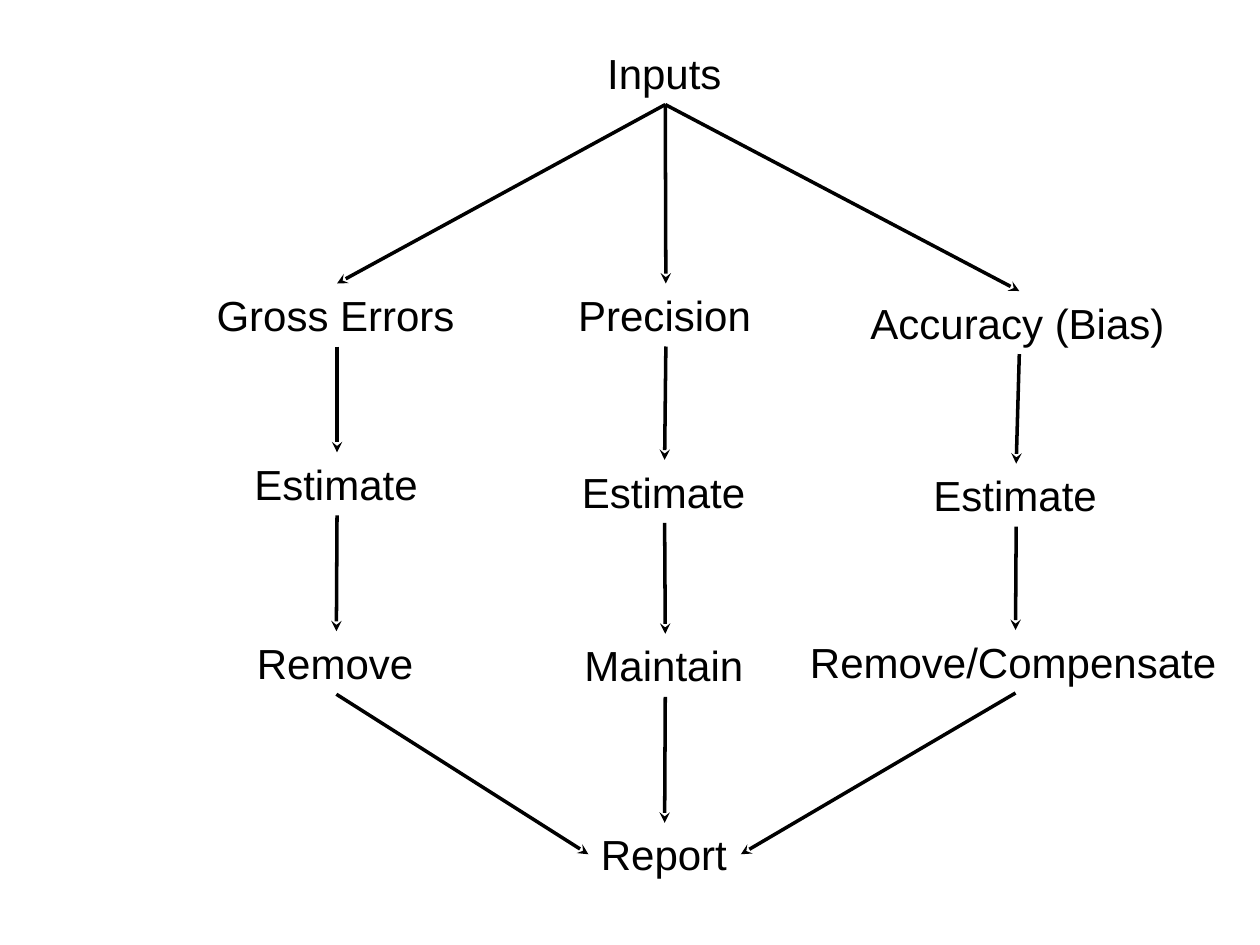
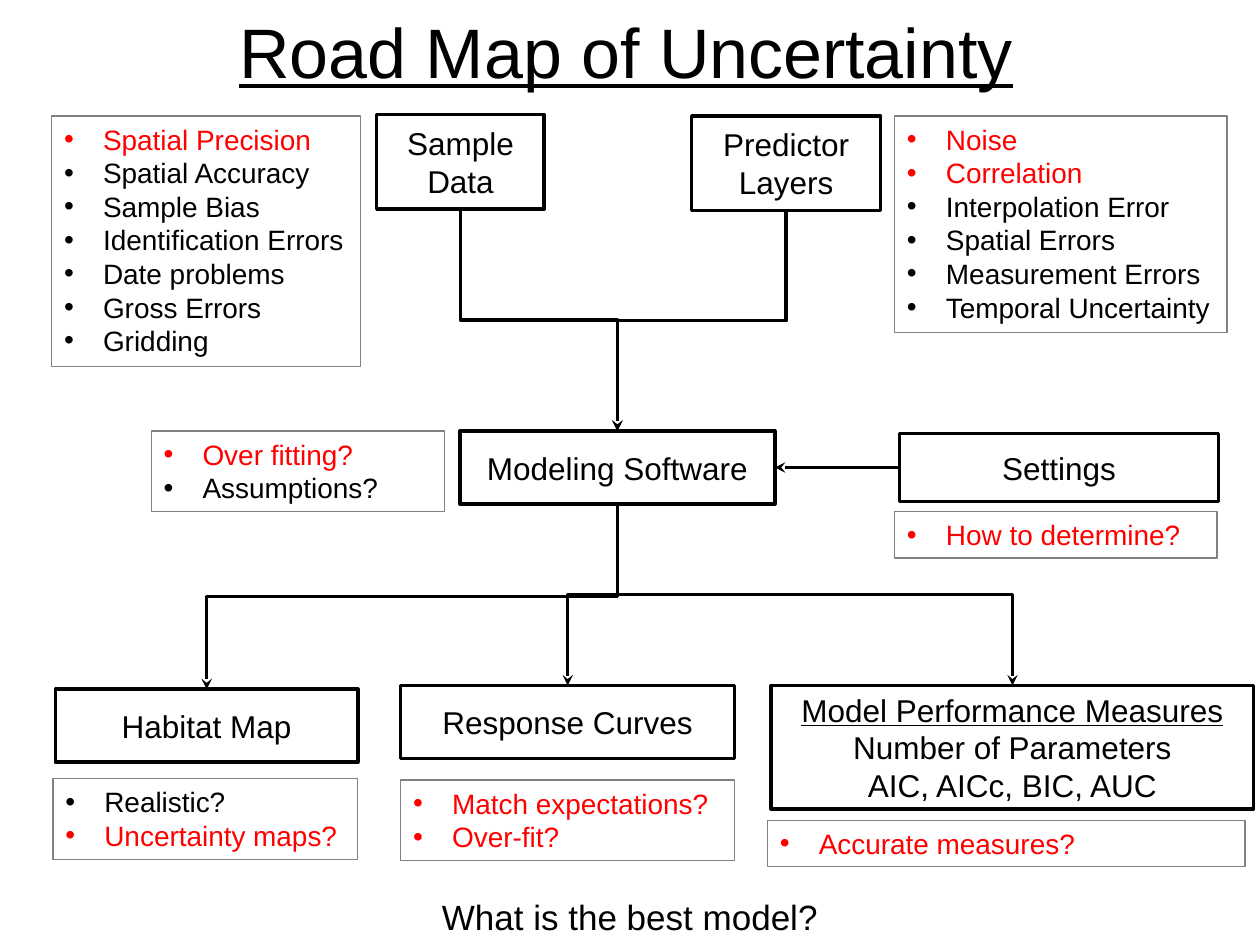
from itertools import pairwise
from typing import NamedTuple

from lxml import etree
from pptx import Presentation
from pptx import util as u
from pptx.dml import color
from pptx.enum import shapes, text
from pptx.oxml import ns

COLORS = {"ink": "000000", "paper": "FFFFFF", "frame": "808080", "alert": "FF0000"}
FONT = "Arial"
TOP, LEFT, BOTTOM, RIGHT = range(4)
LABEL_HEIGHT = 0.5
BULLET_INDENT = 0.31


class Label(NamedTuple):
    text: str
    left: float
    top: float
    width: float


class Box(NamedTuple):
    lines: list[str]
    left: float
    top: float
    width: float
    height: float
    heading: bool = False


class Line(NamedTuple):
    text: str
    color: str = "ink"
    underline: bool = False


class Notes(NamedTuple):
    lines: list[Line]
    left: float
    top: float
    width: float
    height: float
    wrap: bool = True
    border: float = 0.75


INPUTS = Label("Inputs", 4.72, 0.33, 1.12)
REPORT = Label("Report", 4.67, 6.53, 1.21)
BRANCHES = [
    ([Label("Gross Errors", 1.62, 2.25, 2.11),
      Label("Estimate", 1.92, 3.59, 1.51),
      Label("Remove", 1.94, 5.01, 1.46)], LEFT),
    ([Label("Precision", 4.49, 2.25, 1.59),
      Label("Estimate", 4.52, 3.65, 1.51),
      Label("Maintain", 4.54, 5.03, 1.48)], TOP),
    ([Label("Accuracy (Bias)", 6.81, 2.31, 2.56),
      Label("Estimate", 7.31, 3.68, 1.51),
      Label("Remove/Compensate", 6.33, 5, 3.46)], RIGHT),
]

SAMPLE = Box(["Sample Data"], 2.99, 0.91, 1.33, 0.75)
PREDICTORS = Box(["Predictor Layers"], 5.49, 0.92, 1.5, 0.75)
SOFTWARE = Box(["Modeling Software"], 3.65, 3.42, 2.5, 0.58)
SETTINGS = Box(["Settings"], 7.14, 3.44, 2.53, 0.54)
HABITAT = Box(["Habitat Map"], 0.44, 5.47, 2.4, 0.58)
CURVES = Box(["Response Curves"], 3.18, 5.44, 2.65, 0.58)
MEASURES = Box(
    ["Model Performance Measures", "Number of Parameters", "AIC, AICc, BIC, AUC"],
    6.12, 5.44, 3.83, 0.98, heading=True)
SOURCES = [SAMPLE, PREDICTORS]
RESULTS = [HABITAT, CURVES, MEASURES]

NOTES = [
    Notes([Line("Spatial Precision", "alert"), Line("Spatial Accuracy"),
           Line("Sample Bias"), Line("Identification Errors"),
           Line("Date problems"), Line("Gross Errors"), Line("Gridding")],
          0.41, 0.92, 2.45, 1.99, wrap=False),
    Notes([Line("Noise", "alert"), Line("Correlation", "alert"),
           Line("Interpolation Error"), Line("Spatial Errors"),
           Line("Measurement Errors"), Line("Temporal Uncertainty")],
          7.1, 0.92, 2.64, 1.72, wrap=False, border=1),
    Notes([Line("Over fitting?", "alert"), Line("Assumptions?")], 1.2, 3.42, 2.33, 0.64),
    Notes([Line("How to determine?", "alert")], 7.1, 4.06, 2.56, 0.37),
    Notes([Line("Realistic?"), Line("Uncertainty maps?", "alert")], 0.42, 6.18, 2.42, 0.64),
    Notes([Line("Match expectations?", "alert"), Line("Over-fit?", "alert")],
          3.18, 6.19, 2.65, 0.64),
    Notes([Line("Accurate measures?", "alert")], 6.09, 6.51, 3.79, 0.37),
]


def rgb(name: str) -> color.RGBColor:
    return color.RGBColor.from_string(COLORS[name])


def add_bullet(paragraph) -> None:
    properties = paragraph._p.get_or_add_pPr()
    indent = u.Inches(BULLET_INDENT)
    properties.set("marL", str(indent))
    properties.set("indent", str(-indent))
    font = etree.SubElement(properties, ns.qn("a:buFont"))
    font.set("typeface", FONT)
    etree.SubElement(properties, ns.qn("a:buChar")).set("char", "•")


def write(shape, lines: list[Line], *, size: float, align=text.PP_ALIGN.LEFT,
          anchor=text.MSO_ANCHOR.TOP, wrap: bool = True, grow: bool = False,
          bullets: bool = False) -> None:
    frame = shape.text_frame
    frame.word_wrap = wrap
    frame.vertical_anchor = anchor
    if grow:
        frame.auto_size = text.MSO_AUTO_SIZE.SHAPE_TO_FIT_TEXT
    for index, line in enumerate(lines):
        paragraph = frame.add_paragraph() if index else frame.paragraphs[0]
        paragraph.alignment = align
        if bullets:
            add_bullet(paragraph)
        run = paragraph.add_run()
        run.text = line.text
        run.font.name = FONT
        run.font.size = u.Pt(size)
        run.font.underline = line.underline
        run.font.color.rgb = rgb(line.color)


def add_text(slide, line: Line, left: float, top: float, width: float,
             height: float, **style):
    shape = slide.shapes.add_textbox(*map(u.Inches, (left, top, width, height)))
    write(shape, [line], grow=True, **style)
    return shape


def add_label(slide, label: Label):
    return add_text(slide, Line(label.text), label.left, label.top, label.width,
                    LABEL_HEIGHT, size=24, wrap=False)


def add_rectangle(slide, area: Box | Notes, border_color: str, border: float):
    shape = slide.shapes.add_shape(
        shapes.MSO_SHAPE.RECTANGLE,
        *map(u.Inches, (area.left, area.top, area.width, area.height)))
    shape.shadow.inherit = False
    shape.line.color.rgb = rgb(border_color)
    shape.line.width = u.Pt(border)
    return shape


def add_box(slide, box: Box):
    shape = add_rectangle(slide, box, "ink", 2)
    shape.fill.background()
    lines = [Line(content, underline=box.heading and index == 0)
             for index, content in enumerate(box.lines)]
    write(shape, lines, size=18, align=text.PP_ALIGN.CENTER,
          anchor=text.MSO_ANCHOR.MIDDLE)
    return shape


def add_notes(slide, notes: Notes) -> None:
    shape = add_rectangle(slide, notes, "frame", notes.border)
    shape.fill.solid()
    shape.fill.fore_color.rgb = rgb("paper")
    write(shape, notes.lines, size=16, wrap=notes.wrap, grow=True, bullets=True)


def style_arrow(connector) -> None:
    connector.line.color.rgb = rgb("ink")
    connector.line.width = u.Pt(2)
    tail = etree.SubElement(connector.line._get_or_add_ln(), ns.qn("a:tailEnd"))
    tail.set("type", "stealth")
    etree.SubElement(connector._element.spPr, ns.qn("a:effectLst"))


def join(slide, start, end, start_side: int = BOTTOM, end_side: int = TOP) -> None:
    connector = slide.shapes.add_connector(shapes.MSO_CONNECTOR.STRAIGHT, 0, 0, 0, 0)
    connector.begin_connect(start, start_side)
    connector.end_connect(end, end_side)
    style_arrow(connector)


def add_elbow(slide, start: Box, end: Box) -> None:
    start_x, start_y = start.left + start.width / 2, start.top + start.height
    end_x, end_y = end.left + end.width / 2, end.top
    middle_x, middle_y = (start_x + end_x) / 2, (start_y + end_y) / 2
    half_drop, half_shift = (end_y - start_y) / 2, abs(end_x - start_x) / 2
    rightward = end_x > start_x
    reach = -half_drop if rightward else half_drop
    connector = slide.shapes.add_connector(
        shapes.MSO_CONNECTOR.ELBOW,
        *map(u.Inches, (middle_x - reach, middle_y - half_shift,
                        middle_x + reach, middle_y + half_shift)))
    turn = 270 if rightward else 90
    connector._element.spPr.find(ns.qn("a:xfrm")).set("rot", str(turn * 60000))
    style_arrow(connector)


def build_error_flow(slide) -> None:
    inputs, report = add_label(slide, INPUTS), add_label(slide, REPORT)
    for labels, report_side in BRANCHES:
        steps = [inputs, *(add_label(slide, label) for label in labels)]
        for start, end in pairwise(steps):
            join(slide, start, end)
        join(slide, steps[-1], report, end_side=report_side)


def build_road_map(slide) -> None:
    add_text(slide, Line("Road Map of Uncertainty", underline=True),
             1.8, 0.02, 6.41, 0.77, size=40, wrap=False)
    for box in SOURCES + RESULTS:
        add_box(slide, box)
    software, settings = add_box(slide, SOFTWARE), add_box(slide, SETTINGS)
    for notes in NOTES:
        add_notes(slide, notes)
    for source in SOURCES:
        add_elbow(slide, source, SOFTWARE)
    for result in RESULTS:
        add_elbow(slide, SOFTWARE, result)
    join(slide, settings, software, LEFT, RIGHT)
    add_text(slide, Line("What is the best model?"), 0, 7.06, 10, 0.44,
             size=20, align=text.PP_ALIGN.CENTER)


def main() -> None:
    presentation = Presentation()
    presentation.slide_width = u.Inches(10)
    presentation.slide_height = u.Inches(7.5)
    blank = presentation.slide_layouts[6]
    for build in (build_error_flow, build_road_map):
        build(presentation.slides.add_slide(blank))
    presentation.save("out.pptx")


if __name__ == "__main__":
    main()
